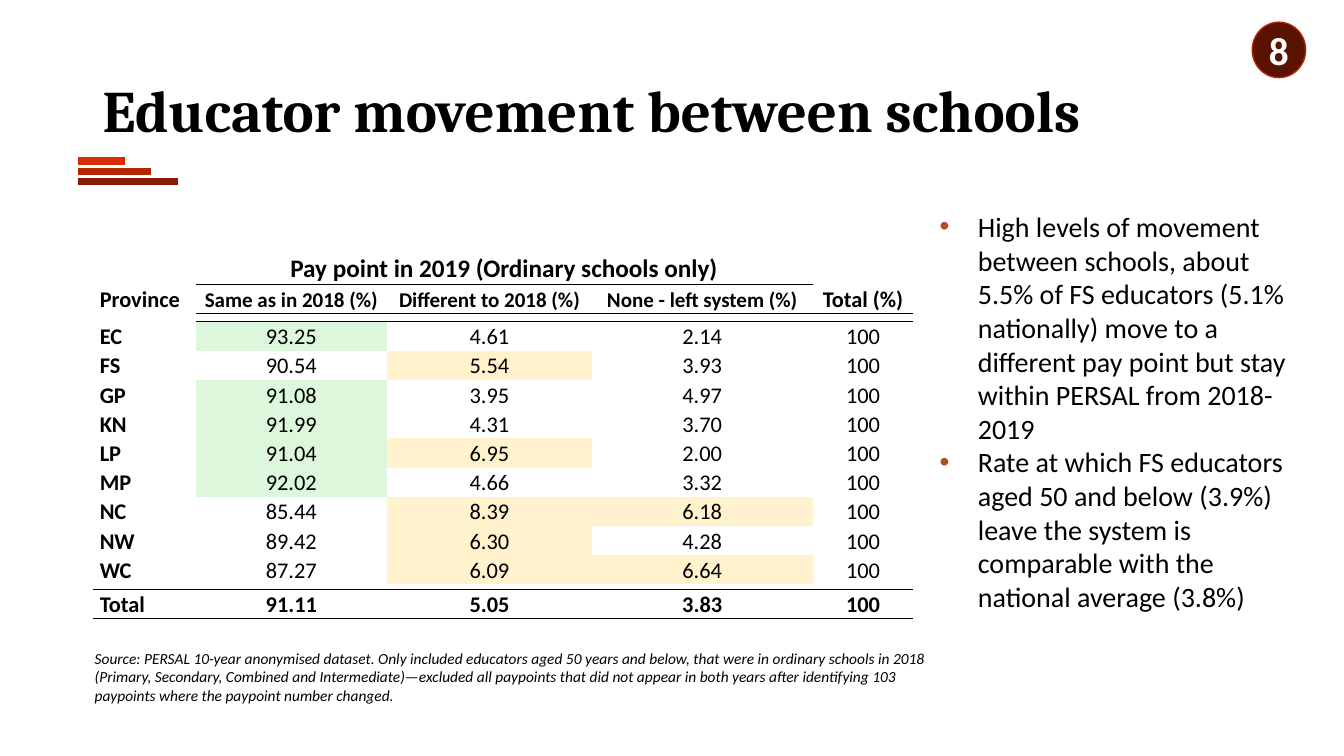
from lxml import etree
from pptx import Presentation
from pptx.dml.color import RGBColor
from pptx.enum.shapes import MSO_CONNECTOR, MSO_SHAPE
from pptx.enum.text import MSO_ANCHOR, PP_ALIGN
from pptx.oxml.ns import qn
from pptx.util import Inches, Pt

COLORS = {
    "text": "000000", "white": "FFFFFF", "bullet": "B64926",
    "bar_light": "D62E00", "bar_mid": "B22600", "bar_dark": "851C00",
    "badge": "591300", "high_stay": "DDF7DD", "high_move": "FFF2CC",
}
NO_STYLE = "{2D5ABB26-0587-4C30-8999-92F81FD0307C}"


def style(para, size, color="text", name="Calibri", bold=False, italic=False):
    font = para.font
    font.name, font.size, font.bold, font.italic = name, Pt(size), bold, italic
    font.color.rgb = RGBColor.from_string(COLORS[color])


def add_border(cell, side):
    """Draw a 1 pt line on one side of a cell: lnT or lnB."""
    line = etree.SubElement(cell._tc.get_or_add_tcPr(), qn(f"a:{side}"), w="12700")
    fill = etree.SubElement(line, qn("a:solidFill"))
    etree.SubElement(fill, qn("a:srgbClr"), val=COLORS["text"])


deck = Presentation()
deck.slide_width, deck.slide_height = Inches(13.33), Inches(7.5)
page = deck.slides.add_slide(deck.slide_layouts[6])

# Stepped bars under the title
for y, right, color in [(1.8, 1.77, "bar_dark"), (1.7, 1.5, "bar_mid"), (1.6, 1.24, "bar_light")]:
    bar = page.shapes.add_connector(
        MSO_CONNECTOR.STRAIGHT, Inches(0.77), Inches(y), Inches(right), Inches(y))
    bar.line.width = Pt(5.5)
    bar.line.color.rgb = RGBColor.from_string(COLORS[color])
    etree.SubElement(bar._element.spPr, qn("a:effectLst"))

# Title, bullet list and source note
title = ["Educator movement between schools"]
findings = [
    "High levels of movement between schools, about 5.5% of FS educators (5.1% nationally) "
    "move to a different pay point but stay within PERSAL from 2018-2019",
    "Rate at which FS educators aged 50 and below (3.9%) leave the system is comparable "
    "with the national average (3.8%)",
]
source = [
    "Source: PERSAL 10-year anonymised dataset. Only included educators aged 50 years and "
    "below, that were in ordinary schools in 2018 (Primary, Secondary, Combined and "
    "Intermediate)—excluded all paypoints that did not appear in both years after "
    "identifying 103 paypoints where the paypoint number changed.",
]
text_blocks = [
    (title, (0.92, 0.4, 11.5, 1.45), dict(size=42, name="Cambria", bold=True)),
    (findings, (9.22, 2.03, 3.65, 5.1), dict(size=20)),
    (source, (0.84, 6.39, 8.59, 0.74), dict(size=11, italic=True)),
]
for lines, place, look in text_blocks:
    frame = page.shapes.add_textbox(*map(Inches, place)).text_frame
    frame.word_wrap = True
    frame.text = "\n".join(lines)
    for para in frame.paragraphs:
        if lines is title:
            frame.vertical_anchor = MSO_ANCHOR.MIDDLE
            para.line_spacing = 0.9
        if lines is findings:
            props = para._p.get_or_add_pPr()
            props.set("marL", str(Inches(0.38)))
            props.set("indent", str(-Inches(0.38)))
            bullet_color = etree.SubElement(props, qn("a:buClr"))
            etree.SubElement(bullet_color, qn("a:srgbClr"), val=COLORS["bullet"])
            etree.SubElement(props, qn("a:buFont"), typeface="Arial")
            etree.SubElement(props, qn("a:buChar"), char="•")
        style(para, **look)

# Pay point table; the empty rows are narrow gaps
GAP = [""] * 5
rows = [
    ["", "Pay point in 2019 (Ordinary schools only)", "", "", ""],
    ["Province", "Same as in 2018 (%)", "Different to 2018 (%)", "None - left system (%)", "Total (%)"],
    GAP,
    ["EC", "93.25", "4.61", "2.14", "100"],
    ["FS", "90.54", "5.54", "3.93", "100"],
    ["GP", "91.08", "3.95", "4.97", "100"],
    ["KN", "91.99", "4.31", "3.70", "100"],
    ["LP", "91.04", "6.95", "2.00", "100"],
    ["MP", "92.02", "4.66", "3.32", "100"],
    ["NC", "85.44", "8.39", "6.18", "100"],
    ["NW", "89.42", "6.30", "4.28", "100"],
    ["WC", "87.27", "6.09", "6.64", "100"],
    GAP,
    ["Total", "91.11", "5.05", "3.83", "100"],
]
column_widths = [1.02, 1.9, 2.03, 2.19, 1]
row_heights = [0.33, 0.29, 0.08] + [0.29] * 9 + [0.05, 0.29]
provinces = range(3, 12)
ruled_columns = {0: range(1, 4), 1: range(1, 5), 12: range(5), 13: range(5)}
# Cells above these column limits are highlighted
limits = {1: (91, "high_stay"), 2: (5, "high_move"), 3: (5, "high_move")}

table_frame = page.shapes.add_table(
    len(rows), len(column_widths), Inches(0.92), Inches(2.49),
    Inches(sum(column_widths)), Inches(sum(row_heights)))
next(table_frame._element.iter(qn("a:tableStyleId"))).text = NO_STYLE
table = table_frame.table
table.first_row = table.horz_banding = False
for column, width in zip(table.columns, column_widths):
    column.width = Inches(width)
for row, height in zip(table.rows, row_heights):
    row.height = Inches(height)
table.cell(0, 1).merge(table.cell(0, 3))

for r, values in enumerate(rows):
    for c, value in enumerate(values):
        cell = table.cell(r, c)
        cell.margin_left = cell.margin_right = Inches(0.07)
        cell.margin_top = cell.margin_bottom = 0
        cell.vertical_anchor = MSO_ANCHOR.BOTTOM
        if c in ruled_columns.get(r - 1, ()):
            add_border(cell, "lnT")
        if c in ruled_columns.get(r, ()):
            add_border(cell, "lnB")
        cell.fill.background()
        if r in provinces and c in limits:
            limit, color = limits[c]
            if float(value) > limit:
                cell.fill.solid()
                cell.fill.fore_color.rgb = RGBColor.from_string(COLORS[color])
        para = cell.text_frame.paragraphs[0]
        if not value:
            etree.SubElement(para._p, qn("a:endParaRPr"), sz="100")
            continue
        cell.text = value
        para = cell.text_frame.paragraphs[0]
        para.line_spacing = 1.07
        if c:
            para.alignment = PP_ALIGN.CENTER
        elif r > 1:
            para.alignment = PP_ALIGN.JUSTIFY
        size = 18 if r == 0 else 15 if r == 1 and c in limits else 16
        style(para, size, bold=c == 0 or r not in provinces)

# Page number badge
badge = page.shapes.add_shape(
    MSO_SHAPE.OVAL, Inches(12.42), Inches(0.22), Inches(0.53), Inches(0.55))
badge.shadow.inherit = False
badge.fill.solid()
badge.fill.fore_color.rgb = RGBColor.from_string(COLORS["badge"])
badge.line.color.rgb = RGBColor.from_string(COLORS["bar_mid"])
badge.line.width = Pt(1)
badge.text_frame.word_wrap = False
badge.text_frame.vertical_anchor = MSO_ANCHOR.MIDDLE
badge.text_frame.text = "8"
number = badge.text_frame.paragraphs[0]
number.alignment = PP_ALIGN.CENTER
style(number, 28, "white", bold=True)

deck.save("out.pptx")
